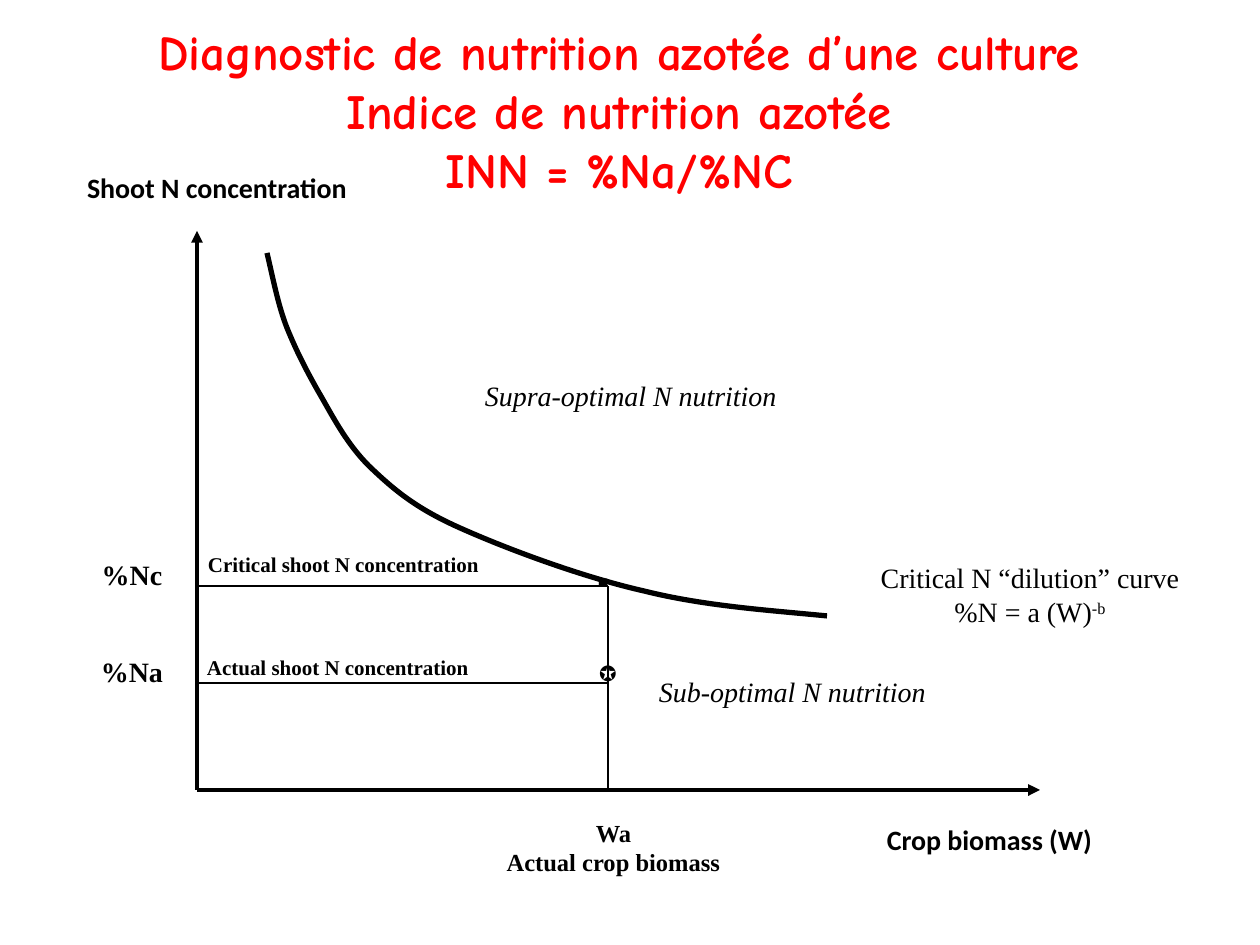
from lxml import etree
from pptx import Presentation
from pptx import util as u
from pptx.dml.color import RGBColor
from pptx.enum import shapes, text
from pptx.oxml.ns import qn

EMU_PER_PX = 914400 / 126
BLACK = RGBColor(0x00, 0x00, 0x00)
RED = RGBColor(0xFF, 0x00, 0x00)
SERIF, SANS, SYMBOL, HAND = "Times New Roman", "Calibri", "Arial", "Comic Neue"
LEFT, CENTER = text.PP_ALIGN.LEFT, text.PP_ALIGN.CENTER

# Axes origin and the marked levels, in px
ORIGIN_X, ORIGIN_Y = 197, 790
ACTUAL_W, CRITICAL_N, ACTUAL_N = 608, 586, 683

# Start point, then two handles and an end point for each segment
DILUTION_CURVE = [
    (267, 253),
    (273, 278), (278, 305), (287, 328),
    (296, 350), (305, 368), (318, 391),
    (331, 413), (345, 442), (369, 466),
    (393, 489), (415, 508), (460, 528),
    (507, 549), (582, 577), (644, 591),
    (704, 606), (766, 610), (827, 616),
]


def px(length):
    return u.Emu(round(length * EMU_PER_PX))


class Diagram:
    """Drawing style together with the slide being drawn."""

    ink = BLACK

    def __init__(self, slide):
        self.slide = slide

    def label(self, box, lines, size, font=SERIF, align=CENTER, color=None,
              inset=(10, 5), wrap=True, **style):
        """Each line is a string, or a (base, superscript) pair."""
        frame = self.slide.shapes.add_textbox(*map(px, box)).text_frame
        frame.word_wrap = wrap
        frame.margin_left = frame.margin_right = px(inset[0])
        frame.margin_top = frame.margin_bottom = px(inset[1])
        formats = {"name": font, "size": u.Pt(size), **style}
        for number, line in enumerate(lines):
            paragraph = frame.add_paragraph() if number else frame.paragraphs[0]
            paragraph.alignment = align
            parts = (line,) if isinstance(line, str) else line
            for position, part in enumerate(parts):
                run = paragraph.add_run()
                run.text = part
                for name, value in formats.items():
                    setattr(run.font, name, value)
                run.font.color.rgb = color or self.ink
                if position:
                    run._r.get_or_add_rPr().set("baseline", "30000")
        return frame

    def line(self, start, end, width=0.75, arrow=False):
        connector = self.slide.shapes.add_connector(
            shapes.MSO_CONNECTOR.STRAIGHT, *map(px, (*start, *end)))
        connector.line.color.rgb = self.ink
        connector.line.width = u.Pt(width)
        if arrow:
            outline = connector.line._get_or_add_ln()
            etree.SubElement(outline, qn("a:tailEnd"), type="triangle")
        etree.SubElement(connector._element.spPr, qn("a:effectLst"))

    def curve(self, points, width):
        """Draw joined cubic Bézier segments."""
        builder = self.slide.shapes.build_freeform(*points[0], scale=EMU_PER_PX)
        builder.add_line_segments(points[1:], close=False)
        shape = builder.convert_to_shape()
        shape.shadow.inherit = False
        shape.fill.background()
        shape.line.color.rgb = self.ink
        shape.line.width = u.Pt(width)
        path = next(shape._element.iter(qn("a:path")))
        steps = path.findall(qn("a:lnTo"))
        for first in range(0, len(steps), 3):
            bezier = etree.SubElement(path, qn("a:cubicBezTo"))
            for step in steps[first:first + 3]:
                bezier.append(step[0])
                path.remove(step)


def main():
    deck = Presentation()
    deck.slide_width, deck.slide_height = px(1260), px(945)
    diagram = Diagram(deck.slides.add_slide(deck.slide_layouts[6]))

    origin = (ORIGIN_X, ORIGIN_Y)
    for axis_end in ((1040, ORIGIN_Y), (ORIGIN_X, 231)):
        diagram.line(origin, axis_end, width=2.25, arrow=True)
    diagram.curve(DILUTION_CURVE, width=3)
    diagram.line((ACTUAL_W, CRITICAL_N), (ACTUAL_W, ORIGIN_Y))
    for level in (ACTUAL_N, CRITICAL_N):
        diagram.line((ACTUAL_W, level), (ORIGIN_X, level))

    diagram.label((578, 656, 60, 48), ["✪"], 12, SYMBOL)
    diagram.label((588, 566, 50, 43), ["■"], 10, SYMBOL, LEFT)

    diagram.label((839, 818, 301, 55), ["Crop biomass (W)"], 16, SANS, bold=True)
    diagram.label((77, 166, 362, 52), ["Shoot N concentration"], 16, SANS, LEFT, bold=True)
    diagram.label((810, 556, 440, 95),
                  ["Critical N “dilution” curve", ("%N = a (W)", "-b")], 16)
    diagram.label((478, 813, 271, 73), ["Wa", "Actual crop biomass"], 14, bold=True)

    for box, caption in (
        ((197, 650, 417, 39), "Actual shoot N concentration"),
        ((198, 547, 404, 26), "Critical shoot N concentration"),
    ):
        diagram.label(box, [caption], 12, align=LEFT, bold=True)
    for top, symbol in ((650, "%Na"), (553, "%Nc")):
        diagram.label((77, top, 110, 48), [symbol], 16, bold=True)
    for box, zone in (
        ((649, 670, 404, 83), "Sub-optimal N nutrition"),
        ((475, 374, 416, 101), "Supra-optimal N nutrition"),
    ):
        diagram.label(box, [zone], 16, align=LEFT, italic=True)

    title = diagram.label(
        (81, 16, 1076, 190),
        ["Diagnostic de nutrition azotée d’une culture",
         "Indice de nutrition azotée",
         "INN = %Na/%NC"],
        28, HAND, color=RED, inset=(13, 6), wrap=False, bold=True)
    title.auto_size = text.MSO_AUTO_SIZE.SHAPE_TO_FIT_TEXT

    deck.save("out.pptx")


if __name__ == "__main__":
    main()
